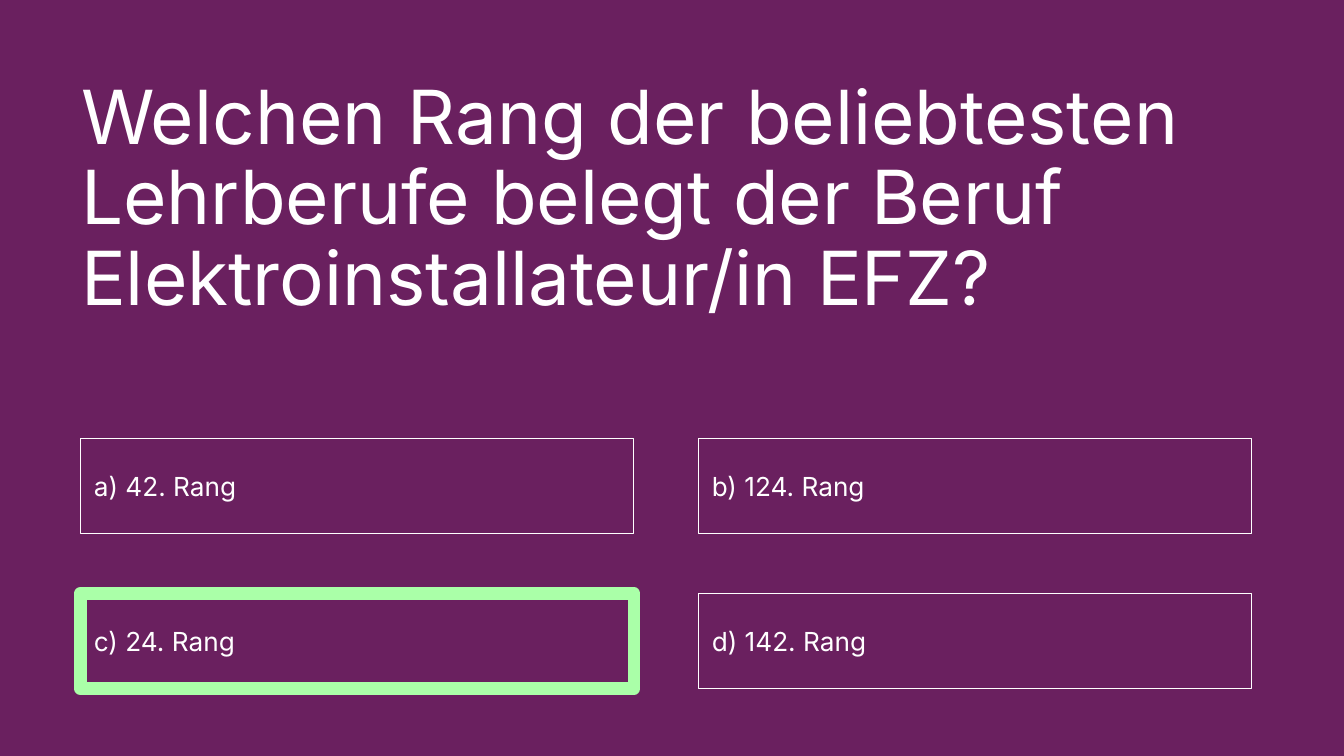
from pptx import Presentation
from pptx.dml.color import RGBColor
from pptx.enum import shapes, text
from pptx.util import Pt

COLOURS = {"background": "6A205F", "text": "FFFFFF", "correct": "AAFFA8"}
FONT = "Inter"
QUESTION = "Welchen Rang der beliebtesten Lehrberufe belegt der Beruf Elektroinstallateur/in EFZ?"
ANSWERS = ["a) 42. Rang", "b) 124. Rang", "c) 24. Rang", "d) 142. Rang"]
CORRECT = 2


def colour(name):
    return RGBColor.from_string(COLOURS[name])


def format_text(shape, wording, size, inset, anchor):
    frame = shape.text_frame
    frame.text = wording
    frame.word_wrap = True
    frame.auto_size = text.MSO_AUTO_SIZE.NONE
    frame.vertical_anchor = anchor
    frame.margin_left = frame.margin_right = Pt(inset)
    frame.margin_top = frame.margin_bottom = Pt(inset)
    paragraph = frame.paragraphs[0]
    paragraph.alignment = text.PP_ALIGN.LEFT
    paragraph.font.name = FONT
    paragraph.font.size = Pt(size)
    paragraph.font.color.rgb = colour("text")
    return paragraph


def add_question(slide, left, top, width, height):
    title = slide.shapes.title
    title.left, title.top = Pt(left), Pt(top)
    title.width, title.height = Pt(width), Pt(height)
    paragraph = format_text(title, QUESTION, 53.3, 0, text.MSO_ANCHOR.TOP)
    paragraph.line_spacing = 0.9


def add_outline(slide, box, line_colour, line_width):
    shape = slide.shapes.add_shape(shapes.MSO_SHAPE.RECTANGLE, *map(Pt, box))
    shape.shadow.inherit = False
    shape.fill.background()
    shape.line.color.rgb = colour(line_colour)
    shape.line.width = Pt(line_width)
    return shape


def add_answers(slide, left, top, width, height):
    gap_x, gap_y = 46, 42.8
    box_width = (width - gap_x) / 2
    box_height = (height - gap_y) / 2
    boxes = []
    for index, answer in enumerate(ANSWERS):
        row, column = divmod(index, 2)
        box = (left + column * (box_width + gap_x),
               top + row * (box_height + gap_y), box_width, box_height)
        boxes.append(box)
        shape = add_outline(slide, box, "text", 0.75)
        format_text(shape, answer, 18.7, 9.6, text.MSO_ANCHOR.MIDDLE)
    add_outline(slide, boxes[CORRECT], "correct", 9)


def add_quiz_slide(presentation):
    slide = presentation.slides.add_slide(presentation.slide_layouts[5])
    slide.background.fill.solid()
    slide.background.fill.fore_color.rgb = colour("background")
    add_question(slide, 58, 57, 814.4, 174)
    add_answers(slide, 57.4, 313, 836.8, 179)


def main():
    presentation = Presentation()
    presentation.slide_width = Pt(960)
    presentation.slide_height = Pt(540)
    add_quiz_slide(presentation)
    presentation.save("out.pptx")


if __name__ == "__main__":
    main()
